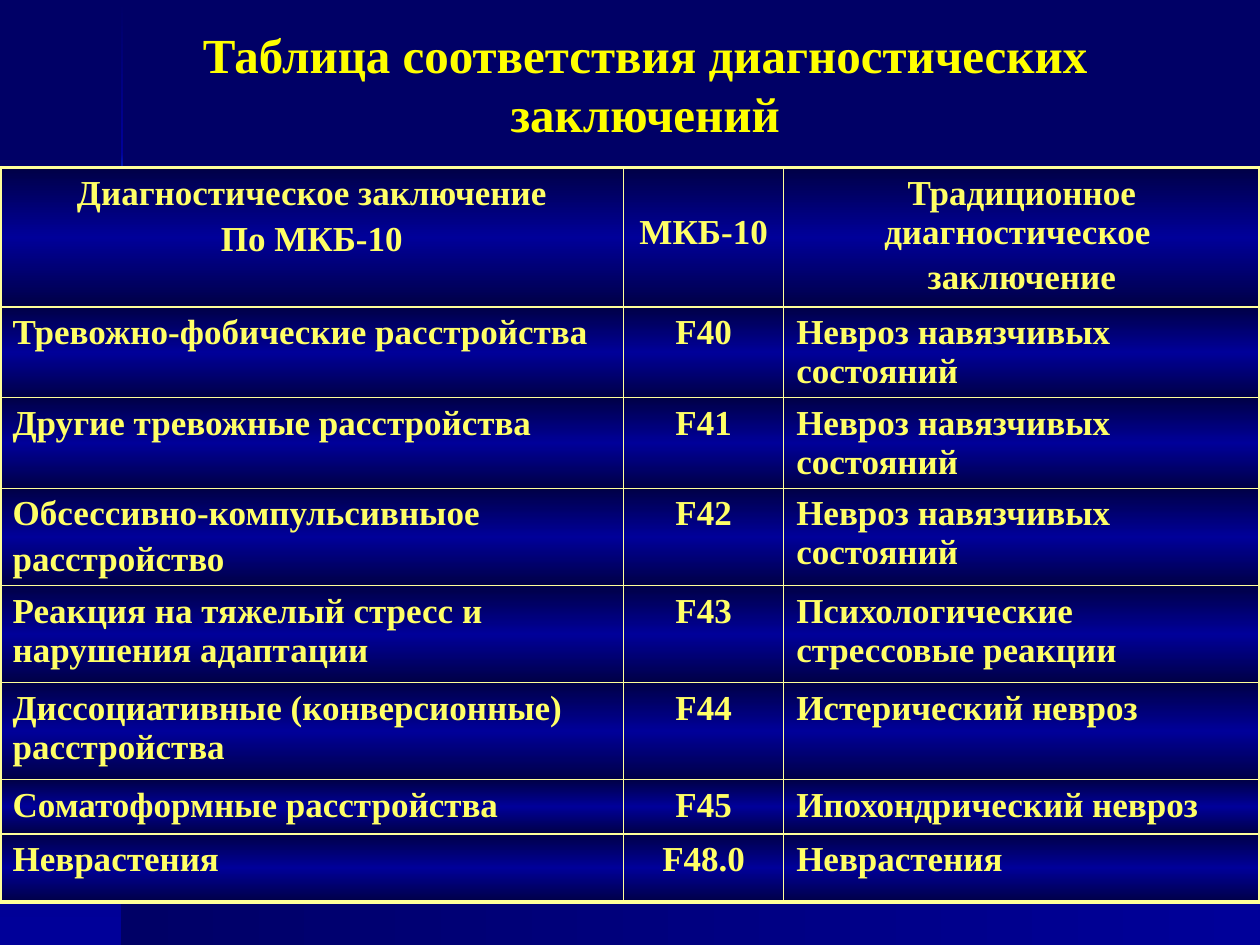
from lxml.etree import SubElement
from pptx import Presentation
from pptx.dml.color import RGBColor
from pptx.enum.shapes import MSO_SHAPE
from pptx.enum.text import MSO_ANCHOR, PP_ALIGN
from pptx.oxml import parse_xml
from pptx.oxml.ns import nsdecls, qn
from pptx.util import Inches, Pt

COLORS = {
    "navy": "000066", "blue": "000099", "bright": "0066FF", "cream": "FFFFCC",
    "title": "FFFF00", "text": "FFFF66", "border": "FFFF99", "cell_edge": "000046",
}
FONT = "Times New Roman"
ACROSS, DOWN = 0, 90

# Each part: left, top, width, height, gradient direction, gradient colours
BACKDROP = [
    (0.97, 2.02, 9.03, 5.48, ACROSS, ("navy", "blue")),
    (0, 2.02, 0.97, 5.48, DOWN, ("navy", "blue")),
    (0.96, 0.01, 0.02, 1.21, DOWN, ("navy", "blue")),
    (0.96, 2.82, 0.02, 4.68, DOWN, ("blue", "navy")),
    (1.77, 2.01, 8.23, 0.02, ACROSS, ("blue", "navy")),
    (0.96, 2.38, 0.02, 0.44, DOWN, ("bright", "blue")),
    (0.96, 1.21, 0.02, 0.44, DOWN, ("blue", "bright")),
    (0.96, 1.65, 0.02, 0.73, DOWN, ("bright", "cream", "bright")),
    (0, 2.01, 0.61, 0.02, ACROSS, ("blue", "bright")),
    (1.33, 2.01, 0.44, 0.02, ACROSS, ("bright", "blue")),
    (0.6, 2.01, 0.73, 0.02, ACROSS, ("bright", "cream", "bright")),
]

COLUMN_WIDTHS = [4.95, 1.27, 3.78]
ROW_HEIGHTS = [1.08, 0.72, 0.72, 0.77, 0.77, 0.77, 0.43, 0.54]
DIAGNOSES = [
    ("Диагностическое заключение\nПо МКБ-10", " МКБ-10",
     "Традиционное диагностическое \nзаключение"),
    ("Тревожно-фобические расстройства", "F40", "Невроз навязчивых состояний"),
    ("Другие тревожные расстройства", "F41", "Невроз навязчивых состояний"),
    ("Обсессивно-компульсивныое\nрасстройство", "F42", "Невроз навязчивых состояний"),
    ("Реакция на тяжелый стресс и нарушения адаптации", "F43",
     "Психологические стрессовые реакции"),
    ("Диссоциативные (конверсионные) расстройства", "F44", "Истерический невроз"),
    ("Соматоформные расстройства", "F45", "Ипохондрический невроз"),
    ("Неврастения", "F48.0", "Неврастения"),
]


def rgb(name):
    return RGBColor.from_string(COLORS[name])


def gradient(names, angle):
    """Return a gradFill element with evenly spaced stops."""
    stops = "".join(
        f'<a:gs pos="{100000 * i // (len(names) - 1)}"><a:srgbClr val="{COLORS[name]}"/></a:gs>'
        for i, name in enumerate(names))
    return parse_xml(f'<a:gradFill {nsdecls("a")} rotWithShape="1"><a:gsLst>{stops}</a:gsLst>'
                     f'<a:lin ang="{angle * 60000}" scaled="0"/></a:gradFill>')


def style(paragraph, size, color, align):
    paragraph.alignment = align
    font = paragraph.font
    font.name, font.size, font.bold = FONT, Pt(size), True
    font.color.rgb = rgb(color)


def add_backdrop(slide):
    slide.background.fill.solid()
    slide.background.fill.fore_color.rgb = rgb("navy")
    for *box, angle, names in BACKDROP:
        band = slide.shapes.add_shape(MSO_SHAPE.RECTANGLE, *map(Inches, box))
        band.shadow.inherit = False
        band.line.fill.background()
        geometry = band._element.spPr.find(qn("a:prstGeom"))
        geometry.addnext(gradient(names, angle))


def add_title(slide, left, top, width, height):
    title = slide.shapes.add_textbox(left, top, width, height).text_frame
    title.word_wrap = True
    title.vertical_anchor = MSO_ANCHOR.MIDDLE
    title.text = "Таблица соответствия диагностических заключений"
    style(title.paragraphs[0], 28, "title", PP_ALIGN.CENTER)


def add_borders(cell, outer_sides):
    """Draw all four borders, thicker on the outer sides of the table."""
    properties = cell._tc.get_or_add_tcPr()
    for side in "LRTB":
        width = Pt(2.25 if side in outer_sides else 1)
        line = SubElement(properties, qn(f"a:ln{side}"), w=str(width))
        SubElement(SubElement(line, qn("a:solidFill")), qn("a:srgbClr"), val=COLORS["border"])


def fill_cell(cell, text, align, outer_sides):
    cell.text = text
    cell.margin_bottom = 0
    for i, paragraph in enumerate(cell.text_frame.paragraphs):
        style(paragraph, 20, "text", align)
        if i:
            paragraph.space_before = Pt(4)
    add_borders(cell, outer_sides)
    cell._tc.get_or_add_tcPr().append(gradient(("cell_edge", "blue", "cell_edge"), DOWN))


def add_diagnosis_table(slide, left, top, width, height):
    last_row, last_column = len(DIAGNOSES) - 1, len(COLUMN_WIDTHS) - 1
    table = slide.shapes.add_table(last_row + 1, last_column + 1, left, top, width, height).table
    table.horz_banding = table.first_row = False
    for column, column_width in zip(table.columns, COLUMN_WIDTHS):
        column.width = Inches(column_width)
    for row, row_height in zip(table.rows, ROW_HEIGHTS):
        row.height = Inches(row_height)
    for r, diagnosis in enumerate(DIAGNOSES):
        for c, text in enumerate(diagnosis):
            edges = {"L": c == 0, "R": c == last_column, "T": r == 0, "B": r == last_row}
            outer_sides = [side for side, is_outer in edges.items() if is_outer]
            align = PP_ALIGN.CENTER if r == 0 or c == 1 else PP_ALIGN.LEFT
            fill_cell(table.cell(r, c), text, align, outer_sides)


def main():
    presentation = Presentation()
    presentation.slide_width, presentation.slide_height = Inches(10), Inches(7.5)
    slide = presentation.slides.add_slide(presentation.slide_layouts[6])
    add_backdrop(slide)
    add_title(slide, Inches(0.83), Inches(0.33), Inches(8.58), Inches(0.67))
    add_diagnosis_table(slide, Inches(0), Inches(1.33), Inches(10), Inches(sum(ROW_HEIGHTS)))
    presentation.save("out.pptx")


if __name__ == "__main__":
    main()
